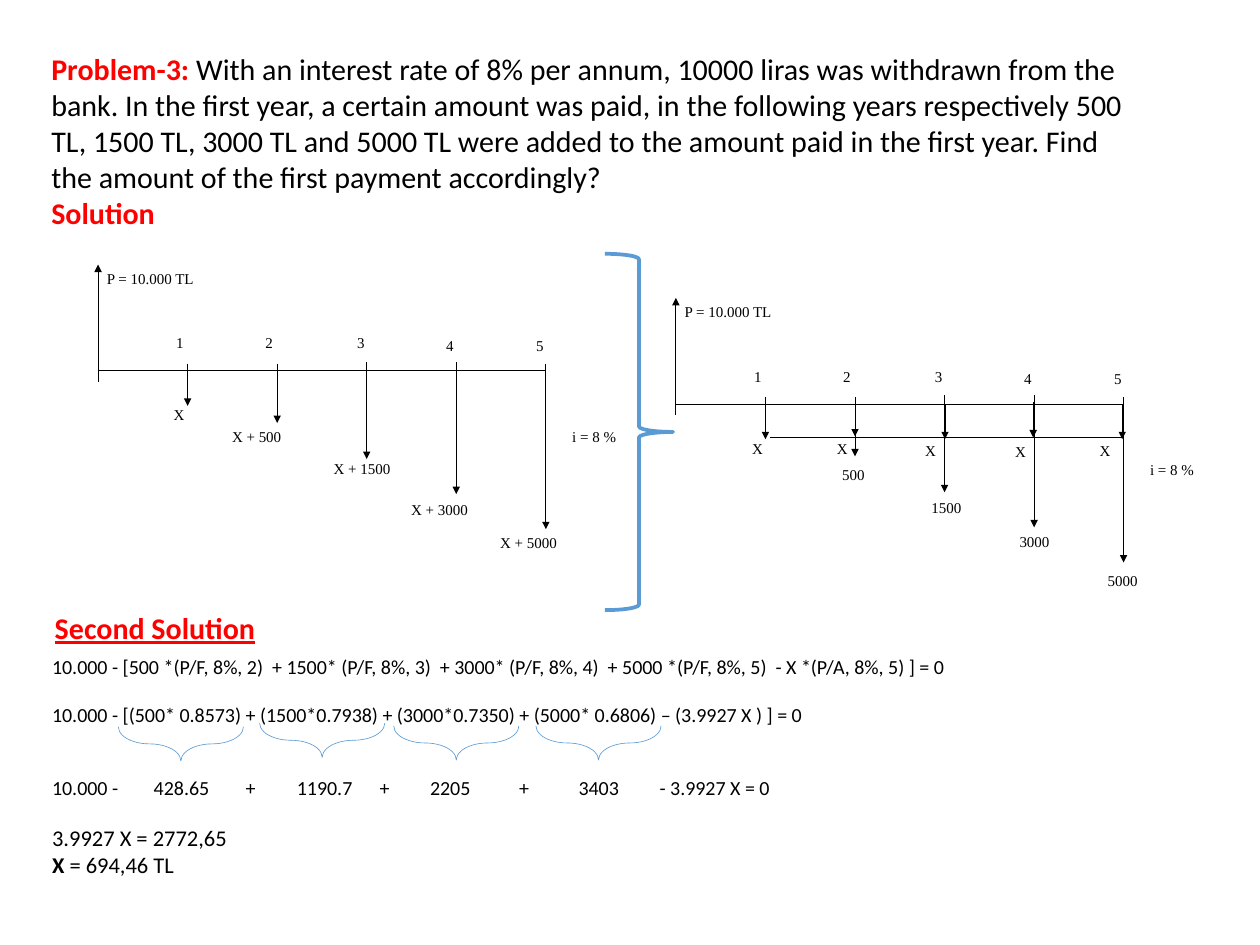
from lxml import etree
from pptx import Presentation
from pptx.dml.color import RGBColor
from pptx.enum.shapes import MSO_CONNECTOR, MSO_SHAPE
from pptx.enum.text import MSO_ANCHOR, MSO_AUTO_SIZE, PP_ALIGN
from pptx.oxml.ns import qn
from pptx.util import Inches, Pt

STRAIGHT = MSO_CONNECTOR.STRAIGHT
LEFT_BRACE, RIGHT_BRACE = MSO_SHAPE.LEFT_BRACE, MSO_SHAPE.RIGHT_BRACE
TOP, LEFT, NO_AUTOFIT = MSO_ANCHOR.TOP, PP_ALIGN.LEFT, MSO_AUTO_SIZE.NONE
BODY_FONT, LABEL_FONT = "Calibri", "Times New Roman"
BLACK, RED, BLUE = "000000", "FF0000", "5B9BD5"

YEAR_STEP = 0.995
PAYMENT_LENGTHS = [0.39, 0.58, 0.98, 1.37, 1.76]
YEAR_LABELS = [(0.77, -0.46), (1.76, -0.46), (2.78, -0.46), (3.77, -0.43), (4.77, -0.43)]
TOTAL_PAYMENTS = [("X", 0.74, 0.34), ("X + 500", 1.39, 0.58), ("X + 1500", 2.52, 0.94),
                  ("X + 3000", 3.38, 1.39), ("X + 5000", 4.37, 1.76)]
SPLIT_PAYMENTS = [("X", 0.75, 0.34), ("500", 1.75, 0.63), ("1500", 2.74, 1.0),
                  ("3000", 3.72, 1.38), ("5000", 4.7, 1.81)]
EQUAL_ARROWS = [(9.5, 4.46), (10.5, 4.49), (11.48, 4.47), (12.47, 4.49)]
EQUAL_LABELS = [(9.2, 4.83), (10.18, 4.86), (11.18, 4.87), (12.12, 4.86)]
TERM_BRACES = [(1.82, 7.57), (3.39, 7.53), (4.88, 7.56), (6.46, 7.56)]
TERM_TABS = [1.13, 2.15, 2.72, 3.64, 4.2, 5.19, 5.85, 6.75]

PROBLEM = ("With an interest rate of 8% per annum, 10000 liras was withdrawn from the bank. "
           "In the first year, a certain amount was paid, in the following years respectively "
           "500 TL, 1500 TL, 3000 TL and 5000 TL were added to the amount paid in the first year. "
           "Find the amount of the first payment accordingly?")
EQUATIONS = [
    ("10.000 - [500 *(P/F, 8%, 2)  + 1500* (P/F, 8%, 3)  + 3000* (P/F, 8%, 4)  "
     "+ 5000 *(P/F, 8%, 5)  - X *(P/A, 8%, 5) ] = 0", 16, 0),
    ("10.000 - [(500* 0.8573) + (1500*0.7938) + (3000*0.7350) + (5000* 0.6806) "
     "– (3.9927 X ) ] = 0", 16, 19.5),
    ("10.000 -\t428.65\t+\t1190.7\t+\t2205\t+\t3403\t- 3.9927 X = 0", 16, 39),
    ("3.9927 X = 2772,65", 18, 19.5),
]


def rgb(color):
    return RGBColor.from_string(color)


def add_run(p, text, size, color=BLACK, font=BODY_FONT, bold=False, underline=False):
    r = p.add_run()
    r.text = text
    r.font.size, r.font.name = Pt(size), font
    r.font.bold, r.font.underline = bold, underline
    r.font.color.rgb = rgb(color)


def add_text_box(shapes, x, y, w, h):
    tf = shapes.add_textbox(Inches(x), Inches(y), Inches(w), Inches(h)).text_frame
    tf.word_wrap = True
    return tf


def add_label(shapes, text, x, y, w=1.33):
    tf = add_text_box(shapes, x, y, w, 0.51)
    add_run(tf.paragraphs[0], text, 12, font=LABEL_FONT)


def add_line(shapes, x1, y1, x2, y2, width=0.75, arrow=False):
    line = shapes.add_connector(STRAIGHT, Inches(x1), Inches(y1), Inches(x2), Inches(y2))
    line.line.color.rgb = rgb(BLACK)
    line.line.width = Pt(width)
    if arrow:
        ln = line.line._get_or_add_ln()
        etree.SubElement(ln, qn("a:tailEnd"), type="triangle")
    etree.SubElement(line._element.spPr, qn("a:effectLst"))


def add_brace(shapes, kind, x, y, w, h, width, curve=0.08, rotation=0):
    sp = shapes.add_shape(kind, Inches(x), Inches(y), Inches(w), Inches(h))
    sp.adjustments[0] = curve
    sp.rotation = rotation
    sp.shadow.inherit = False
    sp.fill.background()
    sp.line.color.rgb = rgb(BLUE)
    sp.line.width = Pt(width)


def add_tabs(p, stops):
    tabs = etree.SubElement(p._p.get_or_add_pPr(), qn("a:tabLst"))
    for stop in stops:
        etree.SubElement(tabs, qn("a:tab"), pos=str(Inches(stop)), algn="l")


def add_cash_flow(slide, x, y, payments):
    shapes = slide.shapes.add_group_shape().shapes
    add_line(shapes, x, y, x + 5 * YEAR_STEP, y)
    add_line(shapes, x, y - 0.08, x, y + 0.12)
    add_line(shapes, x, y, x, y - 1.18, arrow=True)
    add_label(shapes, "P = 10.000 TL", x, y - 1.18, 2.19)
    for year, (length, (dx, dy)) in enumerate(zip(PAYMENT_LENGTHS, YEAR_LABELS), 1):
        year_x = x + year * YEAR_STEP
        tick_top = y - (0.1 if year in (3, 4) else 0.08)
        add_line(shapes, year_x, tick_top, year_x, tick_top + 0.2)
        add_line(shapes, year_x, y, year_x, y + length, arrow=True)
        add_label(shapes, str(year), x + dx, y + dy, 0.42)
    for text, dx, dy in payments:
        add_label(shapes, text, x + dx, y + dy)
    add_label(shapes, "i = 8 %", x + 5.17, y + 0.58, 1.59)


def add_problem(slide):
    title = slide.shapes.title
    title.left, title.top = Inches(0.47), Inches(0.51)
    title.width, title.height = Inches(12.22), Inches(2.12)
    tf = title.text_frame
    tf.word_wrap, tf.auto_size, tf.vertical_anchor = True, NO_AUTOFIT, TOP
    p = tf.paragraphs[0]
    add_run(p, "Problem-3: ", 24, RED, bold=True)
    add_run(p, PROBLEM, 24)
    add_run(tf.add_paragraph(), "Solution", 24, RED, bold=True)
    for p in tf.paragraphs:
        p.alignment = LEFT


def add_second_solution(slide):
    tf = add_text_box(slide.shapes, 0.51, 6.72, 12.22, 0.5)
    add_run(tf.paragraphs[0], "Second Solution", 24, RED, bold=True, underline=True)
    tf = add_text_box(slide.shapes, 0.48, 7.22, 13.22, 2.95)
    for i, (text, size, gap) in enumerate(EQUATIONS):
        p = tf.add_paragraph() if i else tf.paragraphs[0]
        p.space_before = Pt(gap)
        if "\t" in text:
            add_tabs(p, TERM_TABS)
        add_run(p, text, size)
    p = tf.add_paragraph()
    add_run(p, "X ", 18, bold=True)
    add_run(p, "= 694,46 TL", 18)
    for x, y in TERM_BRACES:
        add_brace(slide.shapes, LEFT_BRACE, x, y, 0.38, 1.39, 0.5, 0.94, 270)


def add_equal_payments(slide):
    add_line(slide.shapes, 8.56, 4.86, 12.48, 4.86, 0.5)
    for x, y in EQUAL_ARROWS:
        add_line(slide.shapes, x, y, x, y + 0.39, arrow=True)
    for x, y in EQUAL_LABELS:
        add_label(slide.shapes, "X", x, y, 0.6)


def main():
    prs = Presentation()
    prs.slide_width, prs.slide_height = Inches(14), Inches(10.5)
    slide = prs.slides.add_slide(prs.slide_layouts[5])
    add_problem(slide)
    add_cash_flow(slide, 7.51, 4.49, SPLIT_PAYMENTS)
    add_second_solution(slide)
    add_cash_flow(slide, 1.09, 4.12, TOTAL_PAYMENTS)
    add_equal_payments(slide)
    add_brace(slide.shapes, RIGHT_BRACE, 6.72, 2.82, 0.76, 3.96, 3)
    prs.save("out.pptx")


if __name__ == "__main__":
    main()
